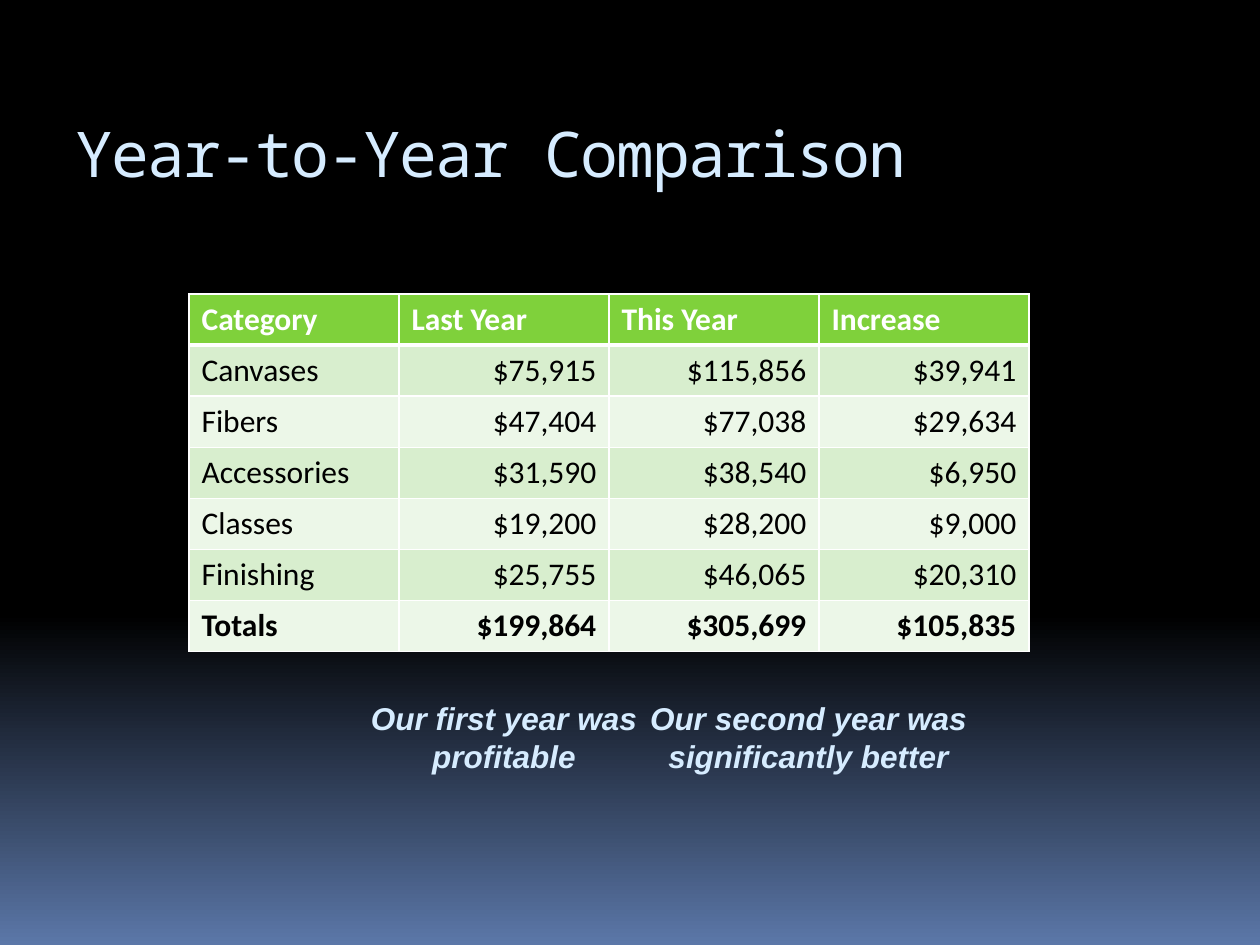
from lxml import etree
from pptx import Presentation
from pptx.dml.color import RGBColor
from pptx.enum.text import MSO_ANCHOR, MSO_AUTO_SIZE, PP_ALIGN
from pptx.oxml.ns import qn
from pptx.util import Pt

LEFT, CENTER, RIGHT = PP_ALIGN.LEFT, PP_ALIGN.CENTER, PP_ALIGN.RIGHT

# Content
TITLE = "Year-to-Year Comparison"
ROWS = [
    ("Category", "Last Year", "This Year", "Increase"),
    ("Canvases", "$75,915", "$115,856", "$39,941"),
    ("Fibers", "$47,404", "$77,038", "$29,634"),
    ("Accessories", "$31,590", "$38,540", "$6,950"),
    ("Classes", "$19,200", "$28,200", "$9,000"),
    ("Finishing", "$25,755", "$46,065", "$20,310"),
    ("Totals", "$199,864", "$305,699", "$105,835"),
]
# Text, left, width
REMARKS = [
    ("Our first year was profitable", 192, 192),
    ("Our second year was significantly better", 360, 204),
]

# Look
PALE_BLUE, WHITE, BLACK = "D6ECFF", "FFFFFF", "000000"
HEADER_FILL, BAND_FILLS = "7FD13B", ("D8EECE", "ECF7E8")
COLUMN_WIDTH, ROW_HEIGHT = 120, 29.2


def color(hex_code):
    return RGBColor.from_string(hex_code)


def style_text(frame, font, size, hex_code, align=LEFT, bold=False, italic=False):
    for para in frame.paragraphs:
        para.alignment = align
        for span in para.runs:
            span.font.name, span.font.size = font, Pt(size)
            span.font.color.rgb = color(hex_code)
            span.font.bold, span.font.italic = bold, italic


def set_borders(cell, widths):
    """Draw white cell borders, with widths in points for each side."""
    properties = cell._tc.get_or_add_tcPr()
    for index, (side, width) in enumerate(widths.items()):
        line = etree.Element(qn(f"a:ln{side}"), w=str(Pt(width)))
        fill = etree.SubElement(line, qn("a:solidFill"))
        etree.SubElement(fill, qn("a:srgbClr"), val=WHITE)
        properties.insert(index, line)


deck = Presentation()
deck.slide_width, deck.slide_height = Pt(720), Pt(540)
page = deck.slides.add_slide(deck.slide_layouts[5])

# Background: black fading to blue at the bottom
background = page.background.fill
background.gradient()
background.gradient_angle = 270
for stop, position, hex_code in zip(
    background.gradient_stops, (0.65, 1), (BLACK, "5B77A8")
):
    stop.position, stop.color.rgb = position, color(hex_code)

# Title
title = page.shapes.title
title.left, title.top, title.width, title.height = Pt(36), Pt(40), Pt(648), Pt(72)
title.text_frame.text = TITLE
title.text_frame.vertical_anchor = MSO_ANCHOR.BOTTOM
style_text(title.text_frame, "Noto Sans Mono", 36, PALE_BLUE)
title.text_frame.paragraphs[0].runs[0].font._element.set("spc", "-100")

# Remarks below the table
for text, left, width in REMARKS:
    box = page.shapes.add_textbox(Pt(left), Pt(396), Pt(width), Pt(50.4))
    box.text_frame.word_wrap = True
    box.text_frame.auto_size = MSO_AUTO_SIZE.SHAPE_TO_FIT_TEXT
    box.text_frame.text = text
    style_text(box.text_frame, "Arial", 18, PALE_BLUE, CENTER, True, True)

# Comparison table
column_count, row_count = len(ROWS[0]), len(ROWS)
table = page.shapes.add_table(
    row_count, column_count, Pt(108), Pt(168),
    Pt(COLUMN_WIDTH * column_count), Pt(ROW_HEIGHT * row_count),
).table
for column in table.columns:
    column.width = Pt(COLUMN_WIDTH)
for row_index, values in enumerate(ROWS):
    table.rows[row_index].height = Pt(ROW_HEIGHT)
    is_header = row_index == 0
    is_total = row_index == row_count - 1
    for column_index, value in enumerate(values):
        cell = table.cell(row_index, column_index)
        cell.text_frame.text = value
        cell.fill.solid()
        cell.fill.fore_color.rgb = color(
            HEADER_FILL if is_header else BAND_FILLS[(row_index - 1) % 2]
        )
        style_text(
            cell.text_frame, "Calibri", 18, WHITE if is_header else BLACK,
            LEFT if is_header or column_index == 0 else RIGHT,
            is_header or is_total,
        )
        set_borders(cell, {
            "L": 1, "R": 1,
            "T": 3 if row_index == 1 else 1,
            "B": 3 if is_header else 1,
        })

deck.save("out.pptx")
